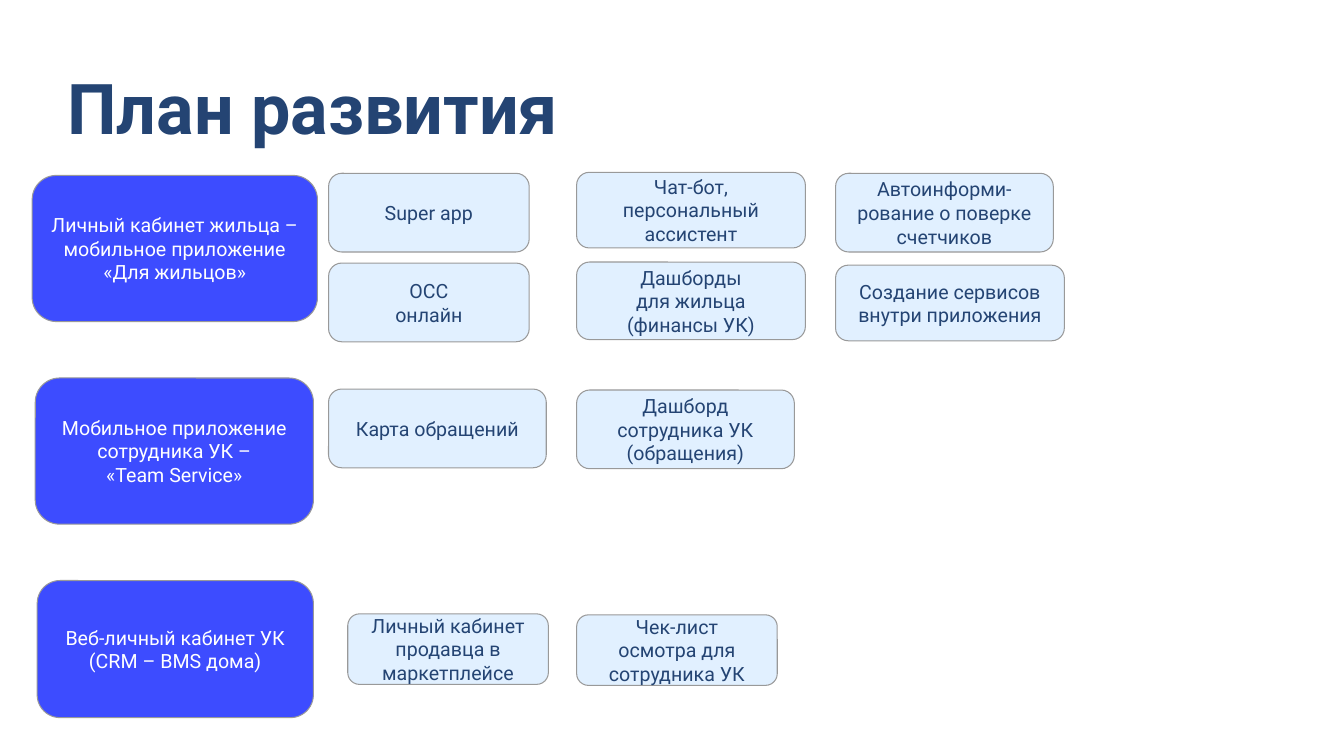
from dataclasses import dataclass

from pptx import Presentation
from pptx.dml.color import RGBColor
from pptx.enum.shapes import MSO_SHAPE
from pptx.enum.text import MSO_ANCHOR, PP_ALIGN
from pptx.slide import Slide
from pptx.text.text import Font, TextFrame
from pptx.util import Pt

BLUE = RGBColor(0x3D, 0x4C, 0xFF)
PALE = RGBColor(0xE1, 0xF0, 0xFF)
NAVY = RGBColor(0x24, 0x44, 0x73)
WHITE = RGBColor(0xFF, 0xFF, 0xFF)
GRAY = RGBColor(0x99, 0x99, 0x99)

# Left edges of the feature columns and the three card widths
COL1, COL2, COL3 = 234.7, 411.9, 596.9
SLIM, MID, WIDE = 143.3, 155.5, 163.4

FRAME = {
    "word_wrap": True,
    "vertical_anchor": MSO_ANCHOR.MIDDLE,
    "margin_left": Pt(7.2),
    "margin_right": Pt(7.2),
    "margin_top": Pt(7.2),
    "margin_bottom": Pt(7.2),
}
TITLE = {"name": "Roboto", "size": Pt(50), "bold": True}
LABEL = {"name": "Roboto", "size": Pt(14), "bold": False}


@dataclass
class Card:
    left: float
    top: float
    width: float
    height: float
    text: str
    fill: RGBColor = PALE
    ink: RGBColor = NAVY


@dataclass
class Product(Card):
    fill: RGBColor = BLUE
    ink: RGBColor = WHITE


CARDS: list[Card] = [
    # Products
    Product(23, 125.3, 203.8, 104.4,
            "Личный кабинет жильца – мобильное приложение «Для жильцов»"),
    Product(25.2, 270, 198.7, 104.4,
            "Мобильное приложение сотрудника УК –\n«Team Service»"),
    Product(26.6, 414.7, 197.3, 97.9,
            "Веб-личный кабинет УК\n(CRM – BMS дома)"),
    # Resident app features
    Card(COL1, 123.8, SLIM, 56.2, "Super app"),
    Card(COL2, 123.1, WIDE, 54, "Чат-бот, персональный ассистент"),
    Card(COL3, 123.8, MID, 56.2, "Автоинформи-рование о поверке счетчиков"),
    Card(COL1, 187.9, SLIM, 56.2, "ОСС\nонлайн"),
    Card(COL2, 187.2, WIDE, 55.4, "Дашборды\nдля жильца (финансы УК)"),
    Card(COL3, 189.4, WIDE, 54, "Создание сервисов внутри приложения"),
    # Staff app features
    Card(COL1, 277.9, MID, 56.2, "Карта обращений"),
    Card(COL2, 278.6, MID, 56.2, "Дашборд сотрудника УК (обращения)"),
    # Web features
    Card(248.4, 438.5, SLIM, 50.4, "Личный кабинет продавца в маркетплейсе"),
    Card(COL2, 439.2, SLIM, 50.4, "Чек-лист\nосмотра для сотрудника УК"),
]


def style(item: TextFrame | Font, values: dict) -> None:
    for key, value in values.items():
        setattr(item, key, value)


def write(frame: TextFrame, text: str, font: dict, ink: RGBColor,
          align: PP_ALIGN) -> None:
    style(frame, FRAME)
    frame.text = text
    for para in frame.paragraphs:
        para.alignment = align
        style(para.font, font)
        para.font.color.rgb = ink


def draw(slide: Slide, card: Card) -> None:
    shape = slide.shapes.add_shape(
        MSO_SHAPE.ROUNDED_RECTANGLE,
        Pt(card.left), Pt(card.top), Pt(card.width), Pt(card.height))
    shape.shadow.inherit = False
    shape.fill.solid()
    shape.fill.fore_color.rgb = card.fill
    shape.line.color.rgb = GRAY
    shape.line.width = Pt(0.75)
    write(shape.text_frame, card.text, LABEL, card.ink, PP_ALIGN.CENTER)


def main() -> None:
    deck = Presentation()
    deck.slide_width, deck.slide_height = Pt(960), Pt(540)
    slide = deck.slides.add_slide(deck.slide_layouts[6])

    # Title
    box = slide.shapes.add_textbox(Pt(41), Pt(45.4), Pt(607), Pt(68.4))
    write(box.text_frame, "План развития", TITLE, NAVY, PP_ALIGN.LEFT)
    box.text_frame.paragraphs[0].line_spacing = 0.9

    # Plan
    for card in CARDS:
        draw(slide, card)

    deck.save("out.pptx")


if __name__ == "__main__":
    main()
